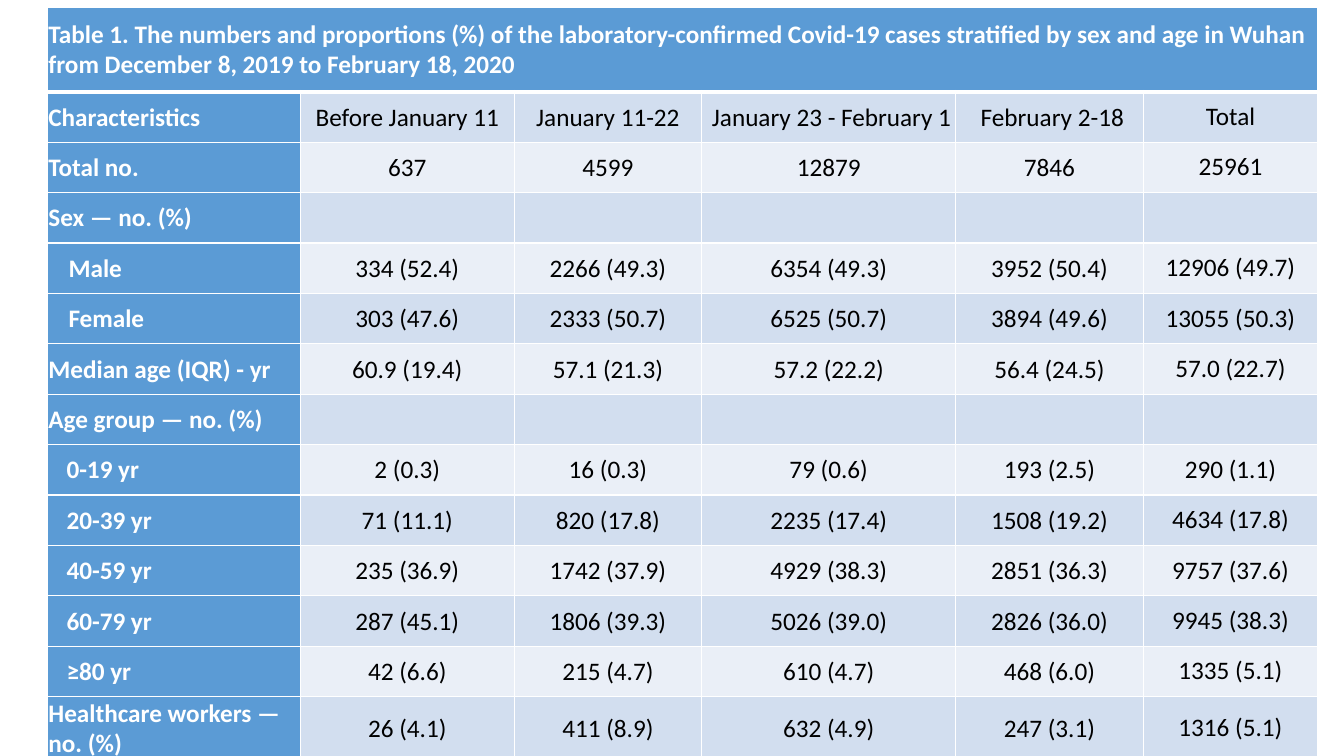
from lxml.etree import SubElement
from pptx import Presentation
from pptx.dml.color import RGBColor
from pptx.enum.text import MSO_ANCHOR as Anchor, PP_ALIGN as Align
from pptx.oxml.ns import qn
from pptx.util import Inches, Pt

TITLE = ("Table 1. The numbers and proportions (%) of the laboratory-confirmed Covid-19 cases "
         "stratified by sex and age in Wuhan from December 8, 2019 to February 18, 2020")
COLUMN_WIDTHS = [2.51, 2.12, 1.86, 2.52, 1.86, 1.73]
SEX_INDENT = (0, 0.2)
AGE_INDENT = (0.18, 0)
INDENTS = {"Male": SEX_INDENT, "Female": SEX_INDENT, "0-19 yr": AGE_INDENT, "20-39 yr": AGE_INDENT,
           "40-59 yr": AGE_INDENT, "60-79 yr": AGE_INDENT, "≥80 yr": AGE_INDENT}
ROWS = [
    ["Characteristics", "Before January 11", "January 11-22", " January 23 - February 1",
     " February 2-18", "Total"],
    ["Total no.", "637", "4599", "12879", "7846", "25961"],
    ["Sex — no. (%)", "", "", "", "", ""],
    ["Male", "334 (52.4)", "2266 (49.3)", "6354 (49.3)", "3952 (50.4)", "12906 (49.7)"],
    ["Female", "303 (47.6)", "2333 (50.7)", "6525 (50.7)", "3894 (49.6)", "13055 (50.3)"],
    ["Median age (IQR) - yr", "60.9 (19.4)", "57.1 (21.3)", "57.2 (22.2)", "56.4 (24.5)", "57.0 (22.7)"],
    ["Age group — no. (%)", "", "", "", "", ""],
    ["0-19 yr", "2 (0.3)", "16 (0.3)", "79 (0.6)", "193 (2.5)", "290 (1.1)"],
    ["20-39 yr", "71 (11.1)", "820 (17.8)", "2235 (17.4)", "1508 (19.2)", "4634 (17.8)"],
    ["40-59 yr", "235 (36.9)", "1742 (37.9)", "4929 (38.3)", "2851 (36.3)", "9757 (37.6)"],
    ["60-79 yr", "287 (45.1)", "1806 (39.3)", "5026 (39.0)", "2826 (36.0)", "9945 (38.3)"],
    ["≥80 yr", "42 (6.6)", "215 (4.7)", "610 (4.7)", "468 (6.0)", "1335 (5.1)"],
    ["Healthcare workers — no. (%)", "26 (4.1)", "411 (8.9)", "632 (4.9)", "247 (3.1)", "1316 (5.1)"],
]
ROW_HEIGHTS = [0.84] + [0.5] * (len(ROWS) - 1) + [0.63]


def color(value):
    """Turn a hex string into a colour."""
    return RGBColor.from_string(value)


class TableSlide:
    """Hold the table style and the current slide."""

    font = "Calibri"
    size = 18
    heading = "5B9BD5"
    bands = ("EAEFF7", "D2DEEF")
    white = "FFFFFF"
    black = "000000"

    def __init__(self, page):
        """Keep the slide to draw on."""
        self.page = page

    def borders(self, cell, top=1, bottom=1):
        """Draw white lines on the four sides of a cell."""
        properties = cell._tc.get_or_add_tcPr()
        sides = [("a:lnL", 1), ("a:lnR", 1), ("a:lnT", top), ("a:lnB", bottom)]
        for position, (tag, width) in enumerate(sides):
            line = SubElement(properties, qn(tag), w=str(Pt(width)))
            fill = SubElement(line, qn("a:solidFill"))
            SubElement(fill, qn("a:srgbClr"), val=self.white)
            properties.insert(position, line)

    def label(self, cell, text, heading, last):
        """Put styled text into a cell."""
        cell.vertical_anchor = Anchor.MIDDLE
        inset = Inches(0 if last else 0.01)
        cell.margin_left = cell.margin_right = cell.margin_top = inset
        cell.margin_bottom = 0
        para = cell.text_frame.paragraphs[0]
        para.text = text
        para.alignment = Align.LEFT if heading else Align.CENTER
        para.font.name = self.font
        para.font.size = Pt(self.size)
        para.font.bold = heading
        para.font.color.rgb = color(self.white if heading else self.black)
        if text in INDENTS:
            margin, first_line = INDENTS[text]
            layout = para._p.get_or_add_pPr()
            layout.set("marL", str(Inches(margin)))
            layout.set("indent", str(Inches(first_line)))

    def table(self, left, top, widths, heights, title, rows):
        """Add the table with a merged title row and banded body."""
        frame = self.page.shapes.add_table(len(heights), len(widths), Inches(left), Inches(top),
                                           Inches(sum(widths)), Inches(sum(heights)))
        grid = frame.table
        for column, width in zip(grid.columns, widths):
            column.width = Inches(width)
        for row, height in zip(grid.rows, heights):
            row.height = Inches(height)
        grid.cell(0, 0).merge(grid.cell(0, len(widths) - 1))
        contents = [[title] + [""] * (len(widths) - 1)] + rows
        for row_number, texts in enumerate(contents):
            for column_number, text in enumerate(texts):
                cell = grid.cell(row_number, column_number)
                heading = row_number == 0 or column_number == 0
                cell.fill.solid()
                cell.fill.fore_color.rgb = color(self.heading if heading else self.bands[row_number % 2])
                self.borders(cell, top=3 if row_number == 1 else 1, bottom=3 if row_number == 0 else 1)
                if text:
                    self.label(cell, text, heading, column_number == len(widths) - 1)


def main():
    """Build and save the deck."""
    deck = Presentation()
    deck.slide_width = Inches(13.33)
    deck.slide_height = Inches(7.5)
    page = deck.slides.add_slide(deck.slide_layouts[6])
    TableSlide(page).table(0.47, 0.07, COLUMN_WIDTHS, ROW_HEIGHTS, TITLE, ROWS)
    deck.save("out.pptx")


if __name__ == "__main__":
    main()
